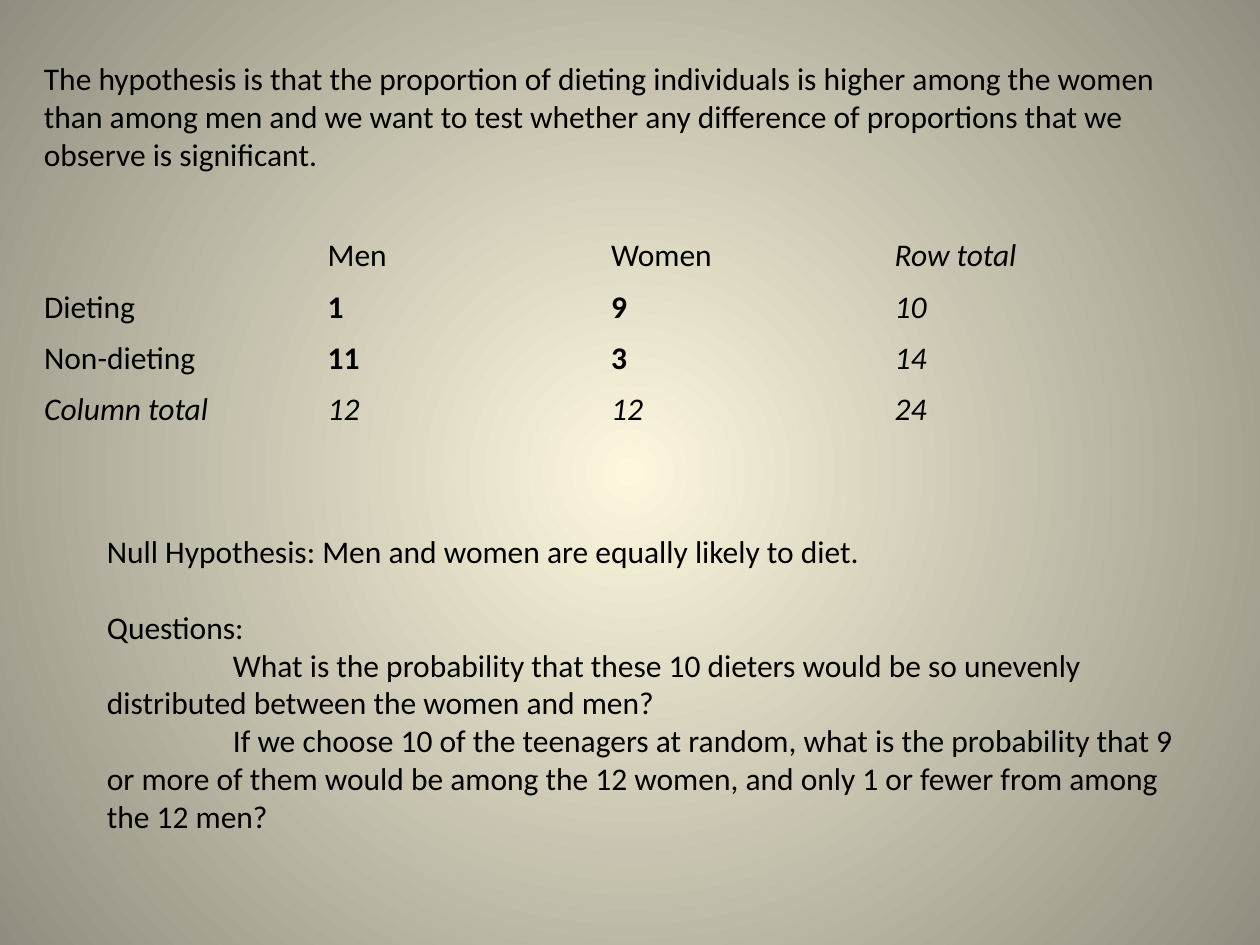
import lxml.etree
import pptx
import pptx.dml.color
import pptx.enum.text
import pptx.oxml
import pptx.oxml.ns
import pptx.util

Inches = pptx.util.Inches
Pt = pptx.util.Pt

BLACK = pptx.dml.color.RGBColor(0x00, 0x00, 0x00)
CREAM = pptx.dml.color.RGBColor(0xFC, 0xF7, 0xDD)
STONE = pptx.dml.color.RGBColor(0x91, 0x8E, 0x81)
FONT = "Calibri"
PLAIN_TABLE_STYLE = "{2D5ABB26-0587-4C30-8999-92F81FD0307C}"

HYPOTHESIS = (
    "The hypothesis is that the proportion of dieting individuals is higher "
    "among the women than among men and we want to test whether any difference "
    "of proportions that we observe is significant."
)
COUNTS = [
    ["", "Men", "Women", "Row total"],
    ["Dieting", "1", "9", "10"],
    ["Non-dieting", "11", "3", "14"],
    ["Column total", "12", "12", "24"],
]
NULL_HYPOTHESIS = "Null Hypothesis: Men and women are equally likely to diet."
QUESTIONS = [
    "What is the probability that these 10 dieters would be so unevenly "
    "distributed between the women and men?",
    "If we choose 10 of the teenagers at random, what is the probability that "
    "9 or more of them would be among the 12 women, and only 1 or fewer from "
    "among the 12 men?",
]


def write(paragraph, text, bold=False, italic=False, space_before=None, indent=None):
    if indent is not None:
        paragraph._p.get_or_add_pPr().set("indent", str(indent))
    if space_before is not None:
        paragraph.space_before = space_before
    run = paragraph.add_run()
    run.text = text
    run.font.name = FONT
    run.font.size = Pt(18)
    run.font.bold = bold
    run.font.italic = italic
    run.font.color.rgb = BLACK


def paint_background(slide):
    fill = slide.background.fill
    fill.gradient()
    for stop, position, color in zip(fill.gradient_stops, (0, 1), (CREAM, STONE)):
        stop.position = position
        stop.color.rgb = color
    gradient = slide._element.find(".//" + pptx.oxml.ns.qn("a:gradFill"))
    radial = pptx.oxml.parse_xml(
        f'<a:path {pptx.oxml.ns.nsdecls("a")} path="circle">'
        '<a:fillToRect l="50000" t="50000" r="50000" b="50000"/></a:path>'
    )
    gradient.replace(gradient.find(pptx.oxml.ns.qn("a:lin")), radial)


def add_text_frame(slide, left, top, width, height):
    frame = slide.shapes.add_textbox(left, top, width, height).text_frame
    frame.word_wrap = True
    frame.auto_size = pptx.enum.text.MSO_AUTO_SIZE.SHAPE_TO_FIT_TEXT
    return frame


def add_hypothesis(slide, left, top, width, height):
    frame = add_text_frame(slide, left, top, width, height)
    write(frame.paragraphs[0], HYPOTHESIS)


def add_counts(slide, left, top, width, height):
    last = len(COUNTS) - 1
    counts = slide.shapes.add_table(
        len(COUNTS), len(COUNTS[0]), left, top, width, height
    ).table
    counts.first_row = False
    counts.horz_banding = False
    style = counts._tbl.tblPr.find(pptx.oxml.ns.qn("a:tableStyleId"))
    style.text = PLAIN_TABLE_STYLE
    for row, values in enumerate(COUNTS):
        for column, value in enumerate(values):
            cell = counts.cell(row, column)
            cell.fill.background()
            cell.vertical_anchor = pptx.enum.text.MSO_ANCHOR.MIDDLE
            if value:
                write(
                    cell.text_frame.paragraphs[0],
                    value,
                    bold=0 < row < last and 0 < column < last,
                    italic=last in (row, column),
                )


def add_questions(slide, left, top, width, height):
    frame = add_text_frame(slide, left, top, width, height)
    write(frame.paragraphs[0], NULL_HYPOTHESIS)
    write(frame.add_paragraph(), "Questions:", space_before=Pt(22))
    for question in QUESTIONS:
        write(frame.add_paragraph(), question, indent=Inches(1))


def main():
    deck = pptx.Presentation()
    deck.slide_width = Inches(10)
    deck.slide_height = Inches(7.5)
    slide = deck.slides.add_slide(deck.slide_layouts[6])
    paint_background(slide)
    add_counts(slide, Inches(0.25), Inches(1.83), Inches(9), Inches(1.6))
    add_hypothesis(slide, Inches(0.25), Inches(0.42), Inches(9.08), Inches(1.01))
    add_questions(slide, Inches(0.75), Inches(4.17), Inches(8.75), Inches(2.83))
    deck.save("out.pptx")


if __name__ == "__main__":
    main()
